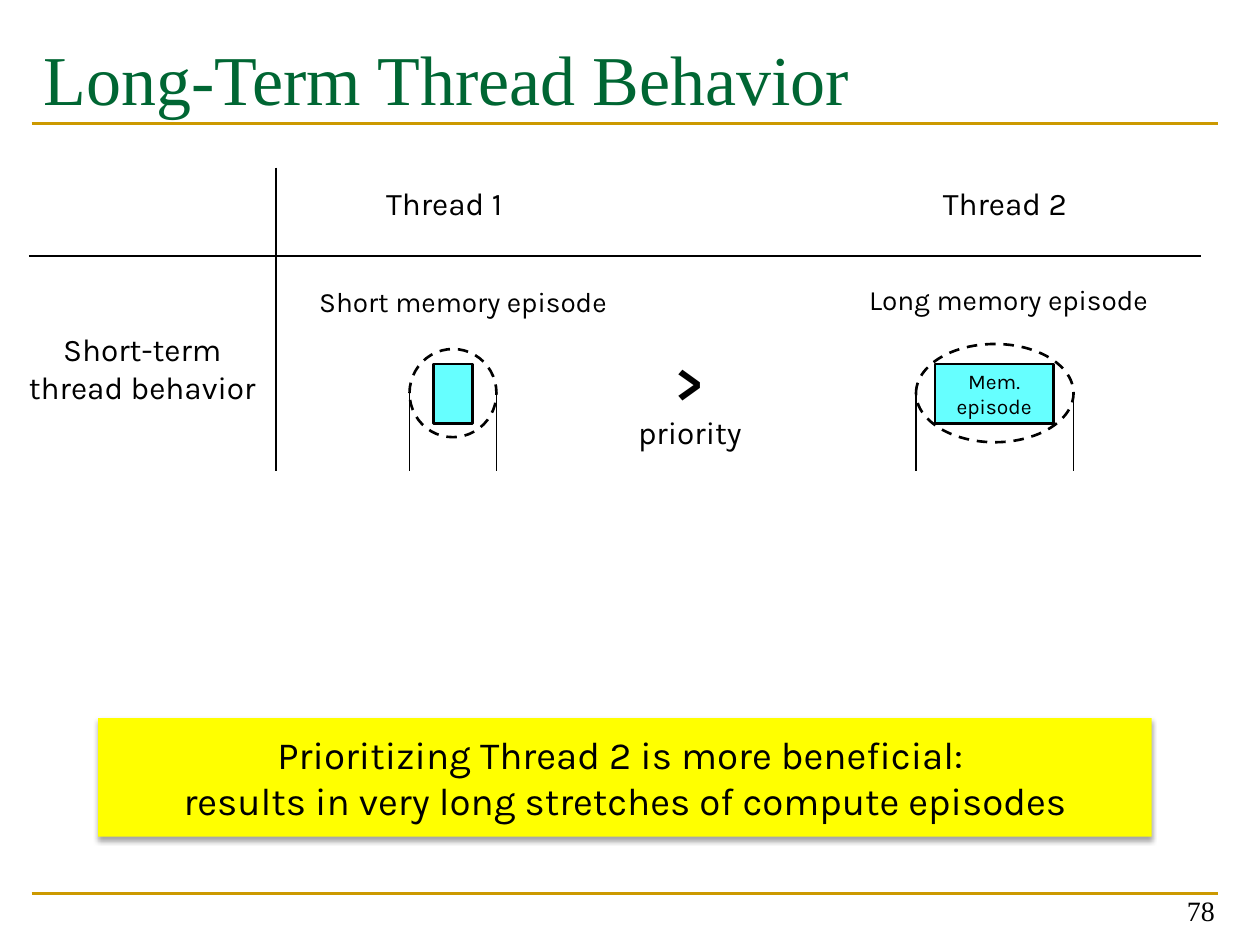
"""Build the slide that compares short-term behavior of two threads."""
from dataclasses import dataclass

from lxml import etree
from pptx import Presentation
from pptx.dml.color import RGBColor
from pptx.enum.dml import MSO_LINE
from pptx.enum.shapes import MSO_CONNECTOR, MSO_SHAPE
from pptx.enum.text import MSO_ANCHOR, MSO_AUTO_SIZE, PP_ALIGN
from pptx.oxml.ns import qn
from pptx.util import Inches, Pt

BLACK = RGBColor(0x00, 0x00, 0x00)
GREEN = RGBColor(0x00, 0x66, 0x33)
GOLD = RGBColor(0xCC, 0x99, 0x00)
CYAN = RGBColor(0x66, 0xFF, 0xFF)
YELLOW = RGBColor(0xFF, 0xFF, 0x00)
SANS, SERIF = "Karla", "Times New Roman"
LEFT, CENTER, RIGHT = PP_ALIGN.LEFT, PP_ALIGN.CENTER, PP_ALIGN.RIGHT
TOP, MIDDLE, BOTTOM = MSO_ANCHOR.TOP, MSO_ANCHOR.MIDDLE, MSO_ANCHOR.BOTTOM
RECTANGLE, ELLIPSE = MSO_SHAPE.RECTANGLE, MSO_SHAPE.OVAL
STRAIGHT, DASH = MSO_CONNECTOR.STRAIGHT, MSO_LINE.DASH
FIT = MSO_AUTO_SIZE.SHAPE_TO_FIT_TEXT
GUIDE_TOP, GUIDE_BOTTOM = 3.12, 3.74


@dataclass(frozen=True)
class Area:
    left: float
    top: float
    width: float
    height: float

    def lengths(self) -> list:
        return [Inches(n) for n in (self.left, self.top, self.width, self.height)]


@dataclass(frozen=True)
class Span:
    text: str
    size: int
    bold: bool = False
    font: str = SANS
    color: RGBColor = BLACK


@dataclass(frozen=True)
class Episode:
    bar: Area
    ring: Area
    label: str = ""


LABELS = [
    (Area(2.82, 1.41, 1.41, 0.4), [Span("Thread 1", 18)]),
    (Area(7.27, 1.41, 1.41, 0.4), [Span("Thread 2", 18)]),
    (Area(0, 2.57, 2.26, 0.71), [Span("Short-term\nthread behavior", 18)]),
    (Area(4.77, 2.73, 1.41, 0.91), [Span(">", 30, True), Span("priority", 18)]),
    (Area(2.27, 2.21, 2.81, 0.37), [Span("Short memory episode", 16)]),
    (Area(6.64, 2.19, 2.73, 0.37), [Span("Long memory episode", 16)]),
]
EPISODES = [
    Episode(Area(3.44, 2.89, 0.31, 0.47), Area(3.25, 2.77, 0.69, 0.7)),
    Episode(Area(7.42, 2.89, 0.94, 0.47), Area(7.27, 2.73, 1.25, 0.78), "Mem.\nepisode"),
]


def write(shape, spans: list[Span], align=CENTER, anchor=TOP) -> None:
    """Write one paragraph for each span."""
    frame = shape.text_frame
    frame.word_wrap = True
    frame.vertical_anchor = anchor
    for index, span in enumerate(spans):
        para = frame.add_paragraph() if index else frame.paragraphs[0]
        para.alignment = align
        for number, line in enumerate(span.text.split("\n")):
            if number:
                para.add_line_break()
            run = para.add_run()
            run.text = line
            run.font.name = span.font
            run.font.size = Pt(span.size)
            run.font.bold = span.bold
            run.font.color.rgb = span.color


def add_text(page, area: Area, spans: list[Span], align=CENTER, anchor=TOP):
    """Add a text box."""
    box = page.shapes.add_textbox(*area.lengths())
    write(box, spans, align, anchor)
    return box


def add_line(page, start: tuple[float, float], end: tuple[float, float],
             color: RGBColor = BLACK, width: float = 1) -> None:
    """Add a straight line without a shadow."""
    line = page.shapes.add_connector(STRAIGHT, *map(Inches, start + end))
    line.line.color.rgb = color
    line.line.width = Pt(width)
    etree.SubElement(line._element.spPr, qn("a:effectLst"))


def add_figure(page, kind, area: Area, fill: RGBColor | None = None, outlined: bool = True):
    """Add a preset shape with an optional fill and black outline."""
    shape = page.shapes.add_shape(kind, *area.lengths())
    shape.shadow.inherit = False
    if fill is None:
        shape.fill.background()
    else:
        shape.fill.solid()
        shape.fill.fore_color.rgb = fill
    if outlined:
        shape.line.color.rgb = BLACK
        shape.line.width = Pt(1.5)
    else:
        shape.line.fill.background()
    return shape


def add_shadow(shape) -> None:
    """Give a shape a soft shadow that falls straight down."""
    effects = shape._element.spPr.find(qn("a:effectLst"))
    shadow = etree.SubElement(effects, qn("a:outerShdw"), blurRad=str(Pt(3.1)),
                              dist=str(Pt(1.8)), dir="5400000", rotWithShape="0")
    color = etree.SubElement(shadow, qn("a:srgbClr"), val=str(BLACK))
    etree.SubElement(color, qn("a:alpha"), val="35000")


def add_episode(page, episode: Episode) -> None:
    """Draw a memory episode, its dashed ring and the guides below it."""
    bar = add_figure(page, RECTANGLE, episode.bar, CYAN)
    if episode.label:
        write(bar, [Span(episode.label, 12)], anchor=MIDDLE)
    ring = add_figure(page, ELLIPSE, episode.ring)
    ring.line.dash_style = DASH
    for x in (episode.ring.left, episode.ring.left + episode.ring.width):
        add_line(page, (x, GUIDE_TOP), (x, GUIDE_BOTTOM))


def main() -> None:
    """Build and save the deck."""
    deck = Presentation()
    deck.slide_width, deck.slide_height = Inches(10), Inches(7.5)
    page = deck.slides.add_slide(deck.slide_layouts[6])

    for y in (7.09, 0.98):
        add_line(page, (0.25, y), (9.67, y), GOLD, 1.5)
    title = add_text(page, Area(0.25, 0.17, 9.42, 1.17),
                     [Span("Long-Term Thread Behavior", 40, font=SERIF, color=GREEN)], LEFT)
    title.text_frame.margin_top = Inches(0.11)
    add_text(page, Area(7.41, 6.91, 2.33, 0.5), [Span("78", 16, font=SERIF)], RIGHT, BOTTOM)

    for area, spans in LABELS:
        add_text(page, area, spans).text_frame.auto_size = FIT
    for episode in EPISODES:
        add_episode(page, episode)
    add_line(page, (0.23, 2.03), (9.53, 2.03))
    add_line(page, (2.19, 1.33), (2.19, GUIDE_BOTTOM))

    banner = add_figure(page, RECTANGLE, Area(0.78, 5.7, 8.36, 0.94), YELLOW, outlined=False)
    add_shadow(banner)
    write(banner, [Span("Prioritizing Thread 2 is more beneficial: ", 22),
                   Span("results in very long stretches of compute episodes", 22)],
          anchor=MIDDLE)
    deck.save("out.pptx")


if __name__ == "__main__":
    main()
